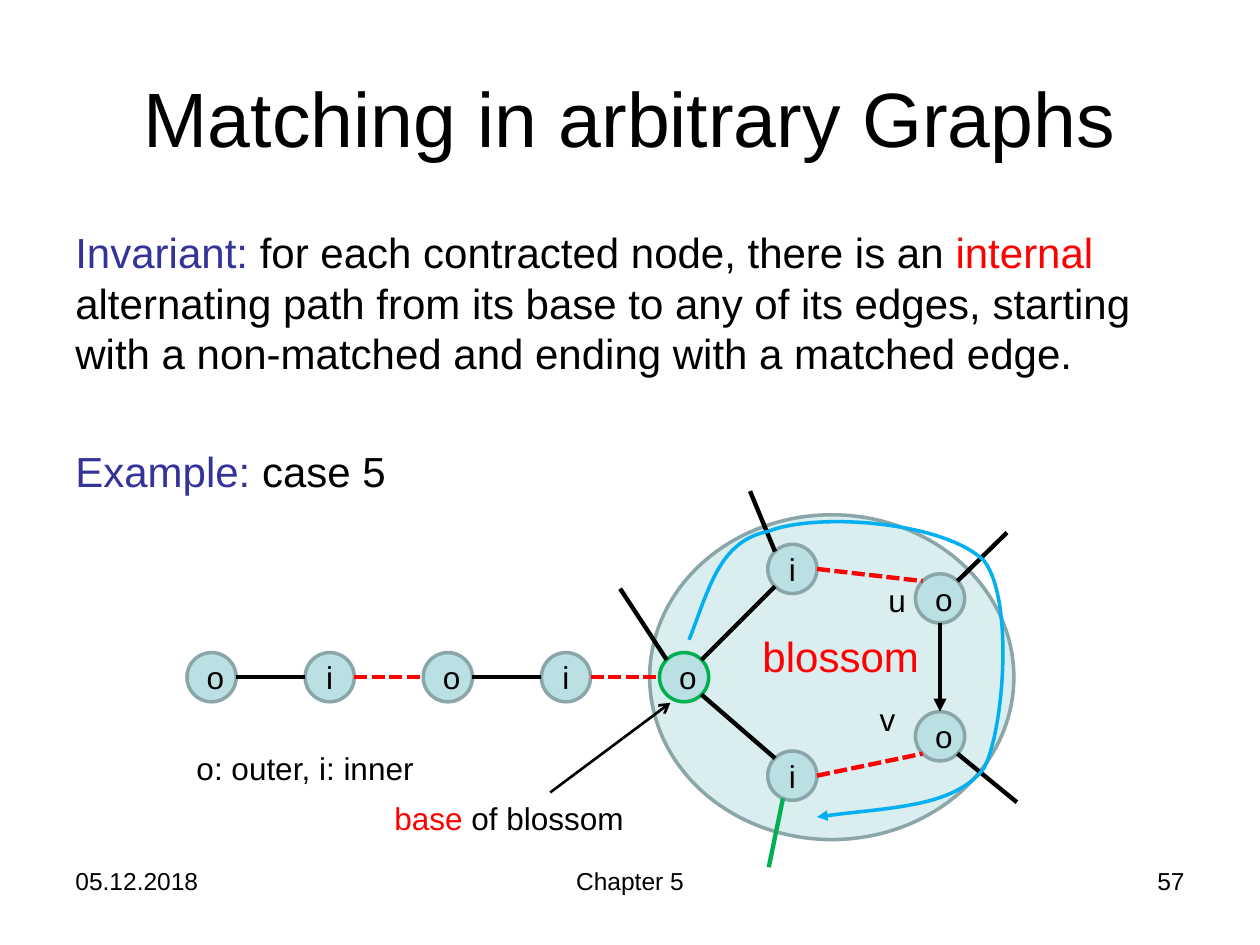
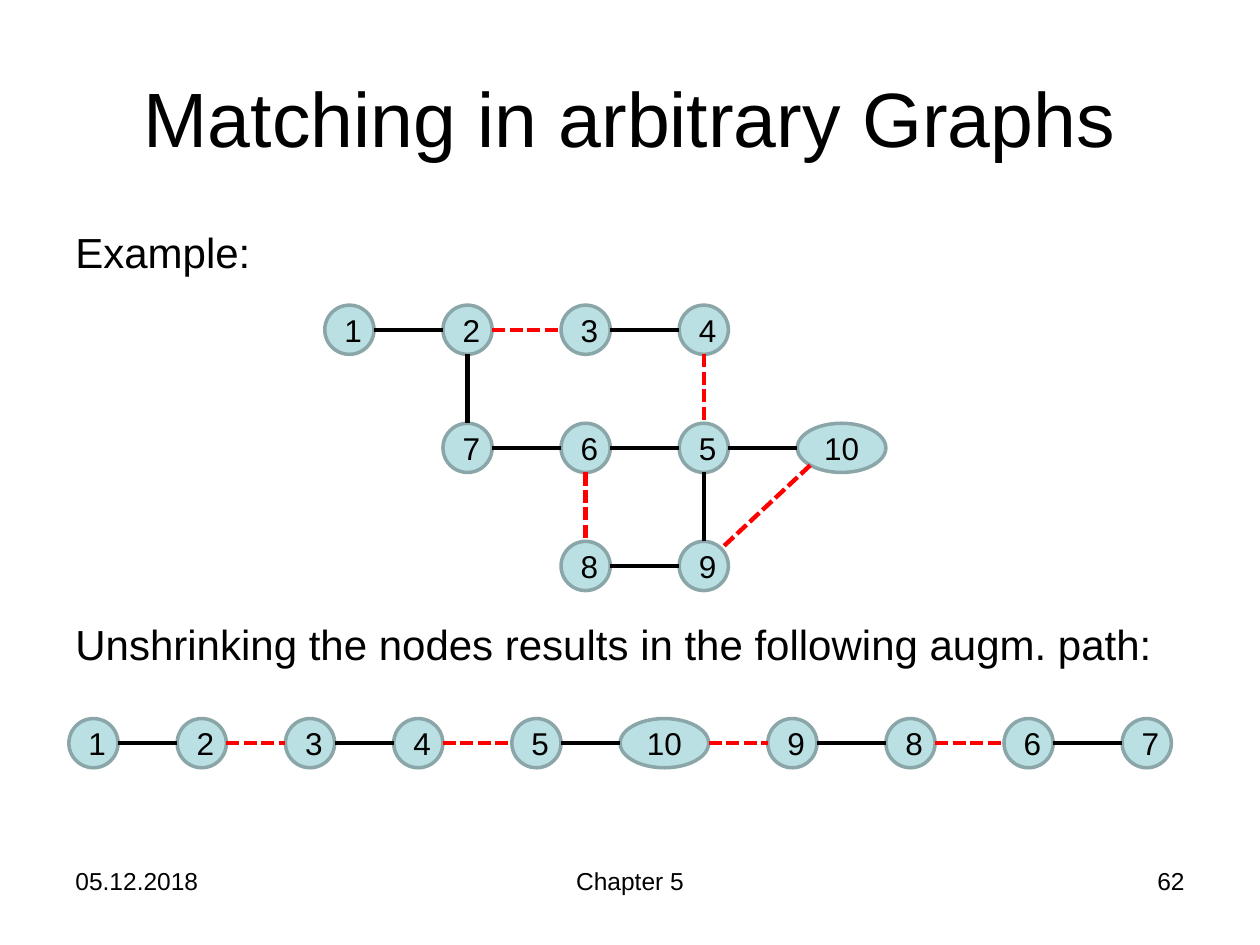
from dataclasses import dataclass
from itertools import cycle
from math import cos, radians, sin

from lxml.etree import SubElement
from pptx import Presentation
from pptx.dml.color import RGBColor
from pptx.enum.dml import MSO_LINE
from pptx.enum.shapes import MSO_CONNECTOR, MSO_SHAPE
from pptx.enum.text import MSO_ANCHOR, PP_ALIGN
from pptx.oxml.ns import qn
from pptx.slide import Slide
from pptx.text.text import _Paragraph as Paragraph
from pptx.util import Inches, Pt

COLUMNS = 128
CELL = Inches(10) // COLUMNS  # square cells: 128 columns by 96 rows
ROWS = 96
NODE_SIZE = 5
COMPASS = {"E": 0, "SE": 45, "S": 90, "SSW": 112.5, "SW": 135,
           "W": 180, "NW": 225, "N": 270, "NE": 315}

Point = tuple[float, float]
Run = tuple[str, RGBColor]


@dataclass(frozen=True)
class Theme:
    font: str = "Arial"
    title_size: int = 44
    body_size: int = 24
    label_size: int = 18
    footer_size: int = 14
    edge_width: float = 2.5
    pointer_width: float = 1.5
    outline_width: float = 2
    text: RGBColor = RGBColor(0x00, 0x00, 0x00)
    keyword: RGBColor = RGBColor(0x33, 0x33, 0x99)
    highlight: RGBColor = RGBColor(0xFF, 0x00, 0x00)
    node: RGBColor = RGBColor(0xBB, 0xE0, 0xE3)
    blossom: RGBColor = RGBColor(0xDA, 0xED, 0xEF)
    outline: RGBColor = RGBColor(0x8A, 0xA6, 0xA8)
    base: RGBColor = RGBColor(0x00, 0xB0, 0x50)
    route: RGBColor = RGBColor(0x00, 0xB0, 0xF0)


THEME = Theme()


@dataclass(frozen=True)
class Box:
    column: float
    row: float
    width: float
    height: float

    def lengths(self) -> list[int]:
        return [cells(value) for value in (self.column, self.row, self.width, self.height)]


@dataclass(frozen=True)
class Node:
    label: str
    column: float
    row: float
    width: float = NODE_SIZE
    outline: RGBColor = THEME.outline

    def at(self, direction: str) -> Point:
        """Point on the node's rim in a compass direction."""
        angle = radians(COMPASS[direction])
        return (self.column + self.width / 2 * (1 + cos(angle)),
                self.row + NODE_SIZE / 2 * (1 + sin(angle)))


@dataclass(frozen=True)
class Edge:
    start: Point
    end: Point
    matched: bool = False
    color: RGBColor = THEME.text
    width: float = THEME.edge_width
    arrow: str = ""


@dataclass(frozen=True)
class Label:
    box: Box
    runs: list[Run]
    size: int = THEME.label_size


TITLE = Box(6.4, 3.84, 115.2, 16)
BODY = Box(6.4, 22.4, 115.2, 63.4)
FOOTERS = [
    (Box(6.4, 87.4, 29.8, 6.7), PP_ALIGN.LEFT),
    (Box(43.7, 87.4, 40.6, 6.7), PP_ALIGN.CENTER),
    (Box(91.8, 87.4, 29.8, 6.7), PP_ALIGN.RIGHT),
]


def cells(count: float) -> int:
    return round(count * CELL)


def fill_paragraph(paragraph: Paragraph, runs: list[Run], size: int,
                   alignment: PP_ALIGN = PP_ALIGN.LEFT) -> None:
    paragraph.alignment = alignment
    paragraph.font.name = THEME.font
    paragraph.font.size = Pt(size)
    for text, color in runs:
        run = paragraph.add_run()
        run.text = text
        run.font.color.rgb = color


def add_text(slide: Slide, box: Box, paragraphs: list[list[Run]], size: int,
             alignment: PP_ALIGN = PP_ALIGN.LEFT, anchor: MSO_ANCHOR = MSO_ANCHOR.TOP,
             wrap: bool = True, gap: float = 0) -> None:
    """Add a text box; gap is the space in points between its paragraphs."""
    frame = slide.shapes.add_textbox(*box.lengths()).text_frame
    frame.word_wrap = wrap
    frame.vertical_anchor = anchor
    for index, runs in enumerate(paragraphs):
        paragraph = frame.add_paragraph() if index else frame.paragraphs[0]
        fill_paragraph(paragraph, runs, size, alignment)
        if index:
            paragraph.space_before = Pt(gap)


def add_ellipse(slide: Slide, box: Box, fill: RGBColor, outline: RGBColor, text: str = "") -> None:
    shape = slide.shapes.add_shape(MSO_SHAPE.OVAL, *box.lengths())
    shape.shadow.inherit = False
    shape.fill.solid()
    shape.fill.fore_color.rgb = fill
    shape.line.color.rgb = outline
    shape.line.width = Pt(THEME.outline_width)
    if text:
        shape.text_frame.vertical_anchor = MSO_ANCHOR.MIDDLE
        fill_paragraph(shape.text_frame.paragraphs[0], [(text, THEME.text)],
                       THEME.label_size, PP_ALIGN.CENTER)


def add_arrowhead(shape, kind: str) -> None:
    SubElement(shape.element.spPr.find(qn("a:ln")), qn("a:tailEnd"), type=kind)


def add_edge(slide: Slide, edge: Edge) -> None:
    ends = [cells(value) for value in (*edge.start, *edge.end)]
    connector = slide.shapes.add_connector(MSO_CONNECTOR.STRAIGHT, *ends)
    connector.line.color.rgb = THEME.highlight if edge.matched else edge.color
    connector.line.width = Pt(edge.width)
    if edge.matched:
        connector.line.dash_style = MSO_LINE.SQUARE_DOT
    if edge.arrow:
        add_arrowhead(connector, edge.arrow)
    SubElement(connector.element.spPr, qn("a:effectLst"))


def add_curve(slide: Slide, start: Point, controls: list[Point]) -> None:
    """Draw cubic curves with an arrowhead; each takes three control points."""
    builder = slide.shapes.build_freeform(*start, scale=CELL)
    builder.add_line_segments(controls, close=False)
    shape = builder.convert_to_shape()
    shape.shadow.inherit = False
    shape.fill.background()
    shape.line.color.rgb = THEME.route
    shape.line.width = Pt(THEME.outline_width)
    add_arrowhead(shape, "triangle")
    segments = list(shape.element.iter(qn("a:lnTo")))
    outline = segments[0].getparent()
    for first in range(0, len(segments), 3):
        curve = SubElement(outline, qn("a:cubicBezTo"))
        for segment in segments[first:first + 3]:
            curve.append(segment[0])
            outline.remove(segment)


def add_graph(slide: Slide, nodes: list[Node], edges: list[Edge]) -> None:
    for node in nodes:
        add_ellipse(slide, Box(node.column, node.row, node.width, NODE_SIZE),
                    THEME.node, node.outline, node.label)
    for edge in edges:
        add_edge(slide, edge)


def alternating_path(nodes: list[Node]) -> list[Edge]:
    """Join neighbours from left to right, every second edge matched."""
    return [Edge(left.at("E"), right.at("W"), matched)
            for left, right, matched in zip(nodes, nodes[1:], cycle((False, True)))]


def add_base_slide(presentation: Presentation, number: int,
                   body: list[list[Run]], gap: float) -> Slide:
    slide = presentation.slides.add_slide(presentation.slide_layouts[6])
    add_text(slide, TITLE, [[("Matching in arbitrary Graphs", THEME.text)]],
             THEME.title_size, PP_ALIGN.CENTER, MSO_ANCHOR.MIDDLE)
    add_text(slide, BODY, body, THEME.body_size, gap=gap)
    for (box, alignment), text in zip(FOOTERS, ("05.12.2018", "Chapter 5", str(number))):
        add_text(slide, box, [[(text, THEME.text)]], THEME.footer_size, alignment)
    return slide


def add_invariant_slide(presentation: Presentation) -> None:
    body = [
        [("Invariant: ", THEME.keyword),
         ("for each contracted node, there is an ", THEME.text),
         ("internal ", THEME.highlight),
         ("alternating path from its base to any of its edges, starting with a "
          "non-matched and ending with a matched edge.", THEME.text)],
        [("Example: ", THEME.keyword), ("case 5", THEME.text)],
    ]
    slide = add_base_slide(presentation, 57, body, gap=38.4)
    add_ellipse(slide, Box(66, 52.3, 37, 33), THEME.blossom, THEME.outline)

    stem_row = 66.3
    stem = [Node(label, 19 + 12 * index, stem_row) for index, label in enumerate("oioi")]
    base = Node("o", 67, stem_row, outline=THEME.base)
    upper = Node("i", 78, stem_row - 11)
    u = Node("o", 93, stem_row - 8)
    v = Node("o", 93, stem_row + 6)
    lower = Node("i", 78, stem_row + 10)
    edges = alternating_path([*stem, base]) + [
        Edge(base.at("NE"), upper.at("SW")),
        Edge(upper.at("E"), u.at("NW"), matched=True),
        Edge(lower.at("NW"), base.at("SE")),
        Edge(lower.at("E"), v.at("SW"), matched=True),
        Edge(u.at("S"), v.at("N"), arrow="triangle"),
        Edge((55.9, 80.5), (68.1, 71.4), width=THEME.pointer_width, arrow="arrow"),
        Edge(u.at("NE"), (102.3, 54.1)),
        Edge(v.at("SE"), (103.3, 81.5)),
        Edge(base.at("NW"), (63, 59.8)),
        Edge(upper.at("NW"), (76.2, 49.9)),
        Edge(lower.at("SSW"), (78.1, 88.1), color=THEME.base),
    ]
    add_graph(slide, [*stem, base, upper, u, v, lower], edges)

    labels = [
        Label(Box(18.7, 75.5, 24.8, 5.1), [("o: outer, i: inner", THEME.text)]),
        Label(Box(76.2, 63.4, 18.7, 6.4), [("blossom", THEME.highlight)], THEME.body_size),
        Label(Box(89, 58.4, 4.4, 5.1), [("u", THEME.text)]),
        Label(Box(88.1, 70.5, 4.2, 5.1), [("v", THEME.text)]),
        Label(Box(38.8, 80.5, 26.1, 5.1),
              [("base ", THEME.highlight), ("of blossom", THEME.text)]),
    ]
    for label in labels:
        add_text(slide, label.box, [label.runs], label.size, wrap=False)

    add_curve(slide, (69.9, 64.8), [
        (71.6, 59.9), (73.3, 55), (78.3, 53.8),
        (83.3, 52.4), (96.3, 52.9), (99.8, 57),
        (103.3, 60.9), (102.3, 73.6), (99.5, 78),
        (96.8, 82.2), (90, 82.4), (83.2, 82.7),
    ])


def add_unshrinking_slide(presentation: Presentation) -> None:
    body = [
        [("Example:", THEME.text)],
        [("Unshrinking the nodes results in the following augm. path:", THEME.text)],
    ]
    slide = add_base_slide(presentation, 62, body, gap=195)

    places = {1: (0, 0), 2: (1, 0), 3: (2, 0), 4: (3, 0), 7: (1, 1),
              6: (2, 1), 5: (3, 1), 10: (4, 1), 8: (2, 2), 9: (3, 2)}
    widths = {10: 9}
    graph = {number: Node(str(number), 33 + 12 * column, 31 + 12 * row,
                          widths.get(number, NODE_SIZE))
             for number, (column, row) in places.items()}
    links = [
        (1, "E", 2, "W", False), (2, "E", 3, "W", True), (3, "E", 4, "W", False),
        (4, "S", 5, "N", True), (2, "S", 7, "N", False), (7, "E", 6, "W", False),
        (6, "E", 5, "W", False), (5, "E", 10, "W", False), (5, "S", 9, "N", False),
        (8, "E", 9, "W", False), (6, "S", 8, "N", True), (10, "SW", 9, "NE", True),
    ]
    add_graph(slide, list(graph.values()),
              [Edge(graph[start].at(leaving), graph[end].at(entering), matched)
               for start, leaving, end, entering, matched in links])

    order = [1, 2, 3, 4, 5, 10, 9, 8, 6, 7]
    columns = [7, 18, 29, 40, 52, 63, 78, 90, 102, 114]
    augmenting = [Node(str(number), column, 73, widths.get(number, NODE_SIZE))
                  for number, column in zip(order, columns)]
    add_graph(slide, augmenting, alternating_path(augmenting))


def main() -> None:
    presentation = Presentation()
    presentation.slide_width = cells(COLUMNS)
    presentation.slide_height = cells(ROWS)
    add_invariant_slide(presentation)
    add_unshrinking_slide(presentation)
    presentation.save("out.pptx")


if __name__ == "__main__":
    main()
